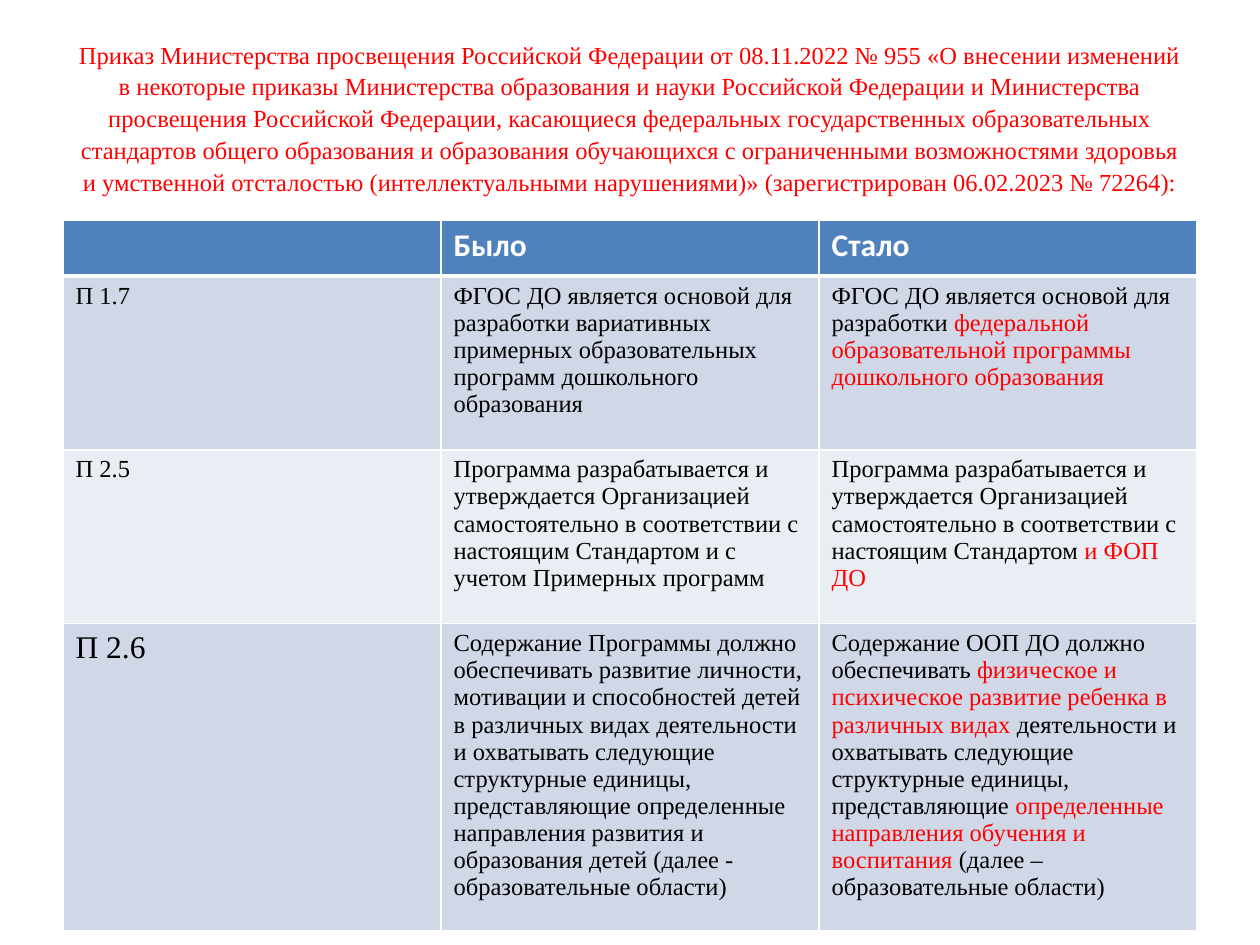
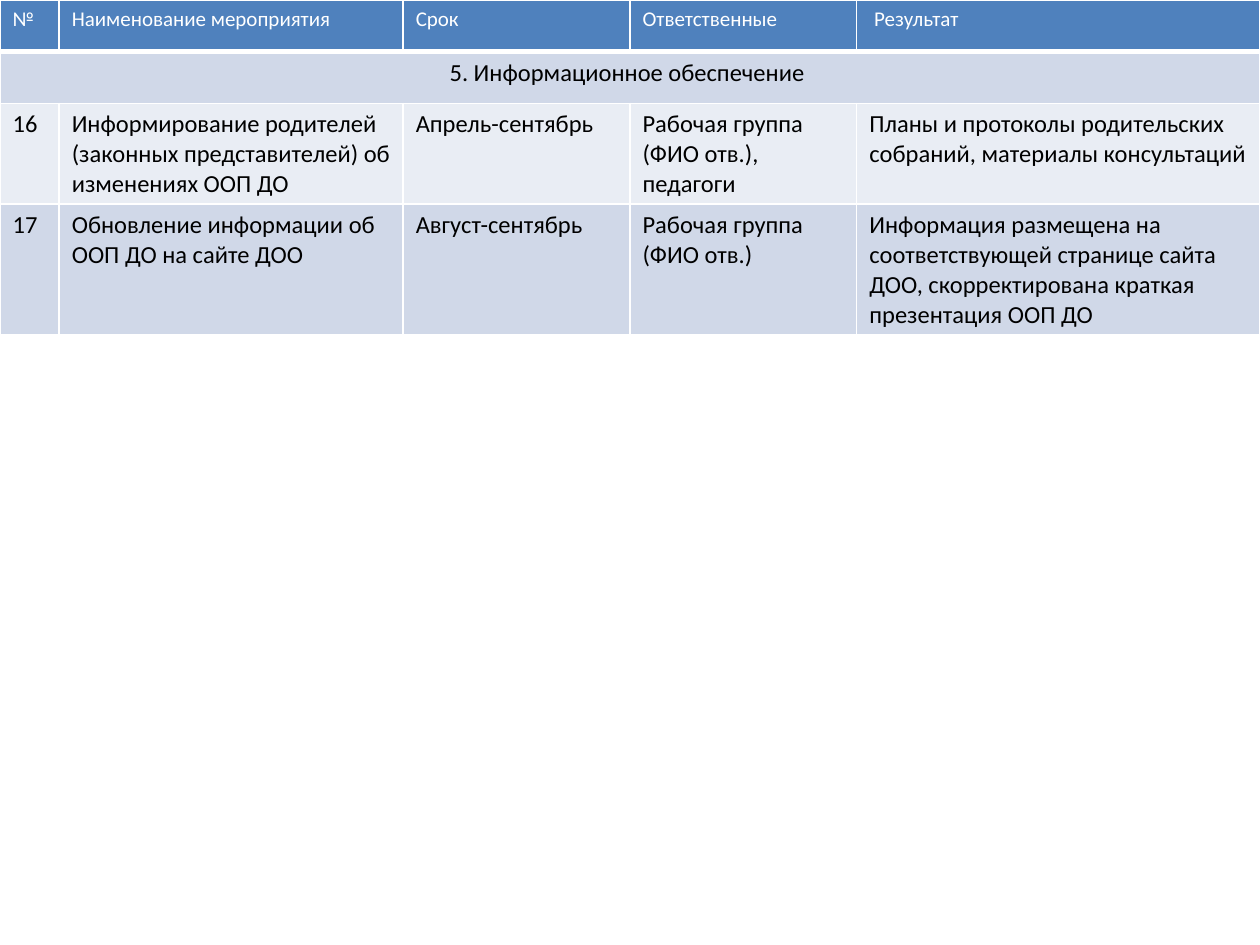
from lxml import etree
from pptx import Presentation
from pptx.dml.color import RGBColor
from pptx.enum.text import MSO_ANCHOR, PP_ALIGN
from pptx.oxml.ns import qn
from pptx.util import Inches, Pt

CENTER = PP_ALIGN.CENTER
MIDDLE = MSO_ANCHOR.MIDDLE

WHITE, BLACK, RED = "FFFFFF", "000000", "FF0000"
HEADER_FILL = "4F81BD"
BAND_FILLS = ("D0D8E8", "E9EDF4")
SERIF, SANS = "Times New Roman", "Calibri"
THIN, THICK = 1, 3

ORDER_TITLE = (
    "Приказ Министерства просвещения Российской Федерации от 08.11.2022 № 955 "
    "«О внесении изменений в некоторые приказы Министерства образования и науки "
    "Российской Федерации и Министерства просвещения Российской Федерации, "
    "касающиеся федеральных государственных образовательных стандартов общего "
    "образования и образования обучающихся с ограниченными возможностями здоровья "
    "и умственной отсталостью (интеллектуальными нарушениями)» "
    "(зарегистрирован 06.02.2023 № 72264):"
)

# Text between a pair of bars is the changed wording, set in red.
AMENDMENTS = [
    ["", "Было", "Стало"],
    ["П 1.7",
     "ФГОС ДО является основой для разработки вариативных примерных "
     "образовательных программ дошкольного образования",
     "ФГОС ДО является основой для разработки |федеральной образовательной "
     "программы дошкольного образования|"],
    ["П 2.5",
     "Программа разрабатывается и утверждается Организацией самостоятельно в "
     "соответствии с настоящим Стандартом и с учетом Примерных программ",
     "Программа разрабатывается и утверждается Организацией самостоятельно в "
     "соответствии с настоящим Стандартом |и ФОП ДО|"],
    ["П 2.6",
     "Содержание Программы должно обеспечивать развитие личности, мотивации и "
     "способностей детей в различных видах деятельности и охватывать следующие "
     "структурные единицы, представляющие определенные направления развития и "
     "образования детей (далее - образовательные области)",
     "Содержание ООП ДО должно обеспечивать |физическое и психическое развитие "
     "ребенка в различных видах |деятельности и охватывать следующие структурные "
     "единицы, представляющие |определенные направления обучения и воспитания| "
     "(далее – образовательные области)"],
]

PLAN_SECTION = "5. Информационное обеспечение "
PLAN = [
    ["№", "Наименование мероприятия", "Срок", "Ответственные", " Результат"],
    [PLAN_SECTION, "", "", "", ""],
    ["16",
     "Информирование родителей (законных представителей) об изменениях ООП ДО",
     "Апрель-сентябрь",
     "Рабочая группа (ФИО отв.), педагоги",
     "Планы и протоколы родительских собраний, материалы консультаций"],
    ["17",
     "Обновление информации об ООП ДО на сайте ДОО",
     "Август-сентябрь",
     "Рабочая группа (ФИО отв.)",
     "Информация размещена на соответствующей странице сайта ДОО, "
     "скорректирована краткая презентация ООП ДО"],
]


def rgb(value):
    return RGBColor.from_string(value)


def write(paragraph, marked_text, color, **font_format):
    """Add runs to the paragraph; wording between bars turns red."""
    for index, wording in enumerate(marked_text.split("|")):
        if not wording:
            continue
        run = paragraph.add_run()
        run.text = wording
        run.font.color.rgb = rgb(RED if index % 2 else color)
        for attribute, value in font_format.items():
            setattr(run.font, attribute, value)


def add_title(slide, text, left, top, width, height):
    frame = slide.shapes.add_textbox(
        Inches(left), Inches(top), Inches(width), Inches(height)).text_frame
    frame.word_wrap = True
    frame.vertical_anchor = MIDDLE
    paragraph = frame.paragraphs[0]
    paragraph.alignment = CENTER
    paragraph.line_spacing = 1.08
    write(paragraph, text, RED, name=SERIF, size=Pt(14))


def set_borders(cell, **widths):
    """Draw white borders; widths maps the sides L, R, T, B to points."""
    properties = cell._tc.get_or_add_tcPr()
    for side, width in widths.items():
        line = etree.SubElement(properties, qn(f"a:ln{side}"), w=str(Pt(width)))
        fill = etree.SubElement(line, qn("a:solidFill"))
        etree.SubElement(fill, qn("a:srgbClr"), val=WHITE)


def add_banded_table(slide, left, top, columns, row_heights, rows,
                     header_font, body_font, special_fonts=None):
    """special_fonts maps (row, column) to font values that differ."""
    table = slide.shapes.add_table(
        len(rows), len(columns), Inches(left), Inches(top),
        Inches(sum(columns)), Inches(sum(row_heights))).table
    for column, width in zip(table.columns, columns):
        column.width = Inches(width)
    for row, height in zip(table.rows, row_heights):
        row.height = Inches(height)

    for r, texts in enumerate(rows):
        is_header = r == 0
        fill = HEADER_FILL if is_header else BAND_FILLS[(r - 1) % 2]
        for c, text in enumerate(texts):
            cell = table.cell(r, c)
            set_borders(cell, L=THIN, R=THIN, T=THICK if r == 1 else THIN,
                        B=THICK if is_header else THIN)
            cell.fill.solid()
            cell.fill.fore_color.rgb = rgb(fill)
            font = header_font if is_header else body_font
            font = {**font, **(special_fonts or {}).get((r, c), {})}
            write(cell.text_frame.paragraphs[0], text,
                  WHITE if is_header else BLACK, **font)
    return table


def build_amendments_slide(slide):
    add_title(slide, ORDER_TITLE, 0.5, 0.3, 9, 1.25)
    add_banded_table(
        slide, 0.5, 1.75, [3] * 3, [0.44, 1.38, 1.38, 2.07], AMENDMENTS,
        header_font={"name": SANS, "size": Pt(18), "bold": True},
        body_font={"name": SERIF, "size": Pt(14), "bold": False},
        special_fonts={(3, 0): {"size": Pt(18)}})


def build_plan_slide(slide):
    plan = add_banded_table(
        slide, 0, 0, [0.47, 2.73, 1.8, 1.8, 3.2], [0.41] * len(PLAN), PLAN,
        header_font={"name": SANS, "size": Pt(12), "bold": False},
        body_font={"name": SANS, "size": Pt(14), "bold": False})
    section = plan.cell(1, 0)
    section.merge(plan.cell(1, len(PLAN[0]) - 1))
    section.text_frame.paragraphs[0].alignment = CENTER


def main():
    deck = Presentation()
    deck.slide_width, deck.slide_height = Inches(10), Inches(7.5)
    blank = deck.slide_layouts[6]
    for build in (build_amendments_slide, build_plan_slide):
        build(deck.slides.add_slide(blank))
    deck.save("out.pptx")


if __name__ == "__main__":
    main()
